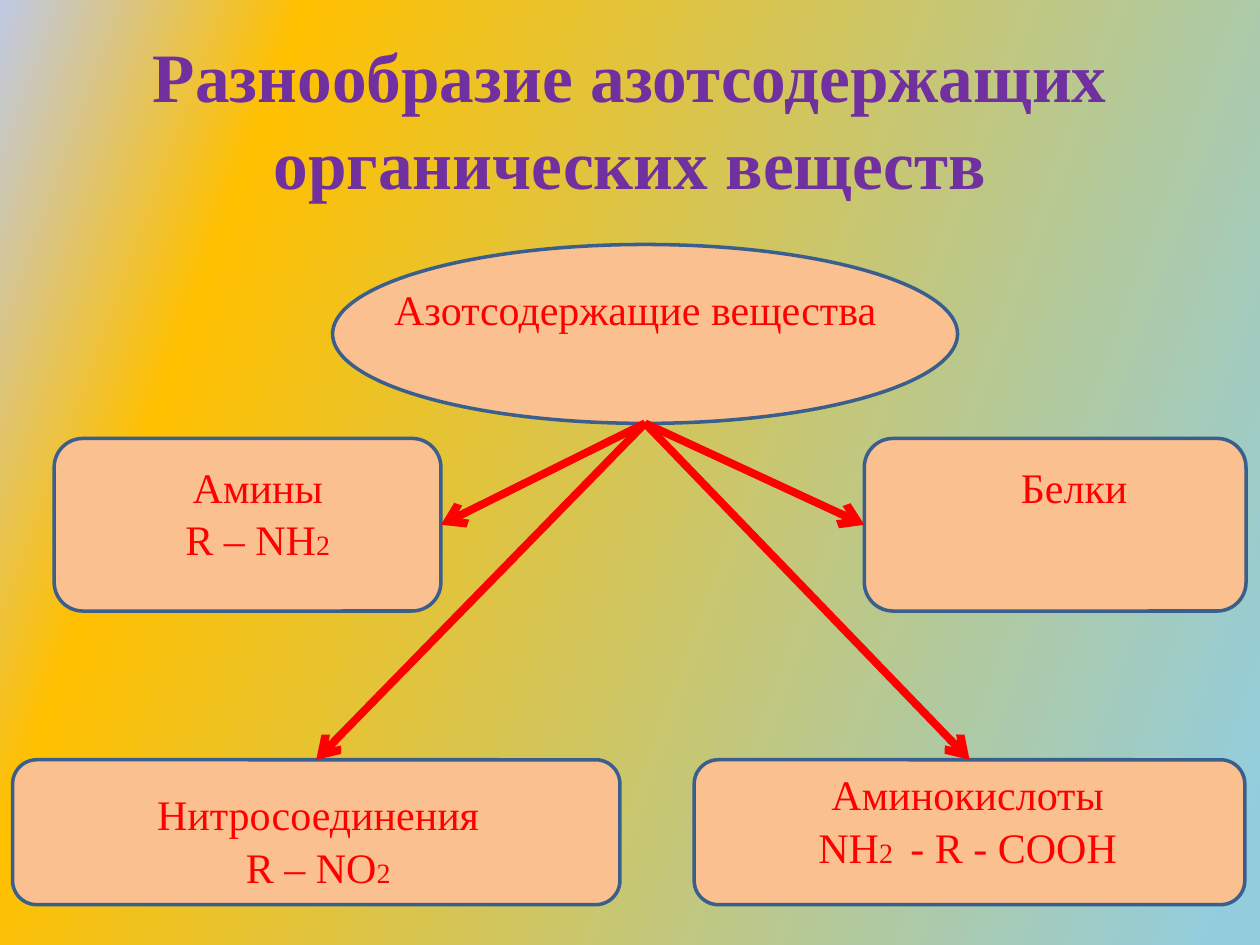
from lxml.etree import SubElement
from pptx import Presentation
from pptx.dml.color import RGBColor
from pptx.enum.shapes import MSO_CONNECTOR, MSO_SHAPE
from pptx.enum.text import MSO_ANCHOR, MSO_AUTO_SIZE, PP_ALIGN
from pptx.oxml import parse_xml
from pptx.oxml.ns import nsdecls, qn
from pptx.util import Inches, Pt

COLUMNS, ROWS = 100, 75
WIDTH, HEIGHT = Inches(10), Inches(7.5)
FONT = "Times New Roman"
RED, PURPLE, PEACH, BLUE = "FF0000", "7030A0", "FAC090", "3A5F8C"
TEXT_SIZE, INDEX_SIZE = 24, 16
TOP, LEFT, RIGHT = 0, 1, 3
BACKGROUND_STOPS = [(0, "BFC9E5"), (19, "FFC000"), (97, "93CDDD")]
ROOT_OVAL = (26.4, 19.4, 49.6, 14.2)
ROOT_LABEL = ((30.3, 21.8, 41.7, 5), [["Азотсодержащие вещества"]])
CLASSES = [
    ((4.3, 34.8, 30.7, 13.7), RIGHT,
     (5.9, 35.9, 29.1, 9.1), [["Амины"], ["R – NH", "2"]]),
    ((68.6, 34.8, 30.3, 13.7), LEFT,
     (70.5, 35.9, 29.5, 5), [["Белки"]]),
    ((1, 60.3, 48.2, 11.5), TOP,
     (2.8, 61.9, 44.9, 9.1), [["Нитросоединения"], ["R – NO", "2"]]),
    ((55.1, 60.3, 43.7, 11.5), TOP,
     (55.1, 60.3, 43.4, 9.1),
     [["Аминокислоты"], ["NH", "2 ", " - R - COOH"]]),
]


def color(value):
    """Return the colour for a hex string."""
    return RGBColor.from_string(value)


def place(left, top, width, height):
    """Turn grid columns and rows into slide lengths."""
    column, row = WIDTH / COLUMNS, HEIGHT / ROWS
    return [round(length) for length in
            (left * column, top * row, width * column, height * row)]


def set_font(font, size, value, bold=False):
    """Format a font."""
    font.name, font.size, font.bold = FONT, Pt(size), bold
    font.color.rgb = color(value)


def paint_background(slide):
    """Fill the slide with a slanted three-colour gradient."""
    fill = slide.background.fill
    fill.gradient()
    gradient = slide._element.find(".//" + qn("a:gradFill"))
    stops = "".join(
        f'<a:gs pos="{share * 1000}"><a:srgbClr val="{value}"/></a:gs>'
        for share, value in BACKGROUND_STOPS)
    gradient.getparent().replace(gradient, parse_xml(
        f'<a:gradFill {nsdecls("a")} rotWithShape="1"><a:gsLst>{stops}</a:gsLst>'
        '<a:lin ang="1200000" scaled="0"/></a:gradFill>'))


def write_title(slide, text):
    """Fill and move the title placeholder."""
    title = slide.shapes.title
    title.left, title.top, title.width, title.height = place(5, 3, 90, 12.5)
    frame = title.text_frame
    frame.text = text
    frame.auto_size = MSO_AUTO_SIZE.NONE
    frame.vertical_anchor = MSO_ANCHOR.MIDDLE
    para = frame.paragraphs[0]
    para.alignment = PP_ALIGN.CENTER
    para.line_spacing = 1.05
    set_font(para.font, 39.6, PURPLE, bold=True)


def add_block(slide, kind, area):
    """Add an outlined peach shape."""
    block = slide.shapes.add_shape(kind, *place(*area))
    block.shadow.inherit = False
    block.fill.solid()
    block.fill.fore_color.rgb = color(PEACH)
    block.line.color.rgb = color(BLUE)
    block.line.width = Pt(2)
    return block


def add_label(slide, area, lines, alignment=PP_ALIGN.CENTER):
    """Add a text box whose lines may hold small indices as second spans."""
    frame = slide.shapes.add_textbox(*place(*area)).text_frame
    frame.word_wrap = True
    for number, spans in enumerate(lines):
        para = frame.add_paragraph() if number else frame.paragraphs[0]
        para.alignment = alignment
        para.line_spacing = 1.05
        set_font(para.font, TEXT_SIZE, RED)
        for position, text in enumerate(spans):
            span = para.add_run()
            span.text = text
            if position == 1:
                span.font.size = Pt(INDEX_SIZE)


def add_arrow(slide, root, block, side):
    """Draw an arrow from the bottom of the root to a side of a block."""
    start = root.left + root.width // 2, root.top + root.height
    arrow = slide.shapes.add_connector(MSO_CONNECTOR.STRAIGHT, *start, *start)
    arrow.end_connect(block, side)
    arrow.line.color.rgb = color(RED)
    arrow.line.width = Pt(4.5)
    SubElement(arrow.line._get_or_add_ln(), qn("a:tailEnd"), type="arrow")
    SubElement(arrow._element.spPr, qn("a:effectLst"))


def main():
    """Build the slide and save the deck."""
    deck = Presentation()
    deck.slide_width, deck.slide_height = WIDTH, HEIGHT
    slide = deck.slides.add_slide(deck.slide_layouts[5])
    paint_background(slide)
    write_title(slide, "Разнообразие азотсодержащих органических веществ")
    root = add_block(slide, MSO_SHAPE.OVAL, ROOT_OVAL)
    add_label(slide, *ROOT_LABEL, alignment=PP_ALIGN.LEFT)
    for area, side, label_area, lines in CLASSES:
        block = add_block(slide, MSO_SHAPE.ROUNDED_RECTANGLE, area)
        add_label(slide, label_area, lines)
        add_arrow(slide, root, block, side)
    deck.save("out.pptx")


if __name__ == "__main__":
    main()
